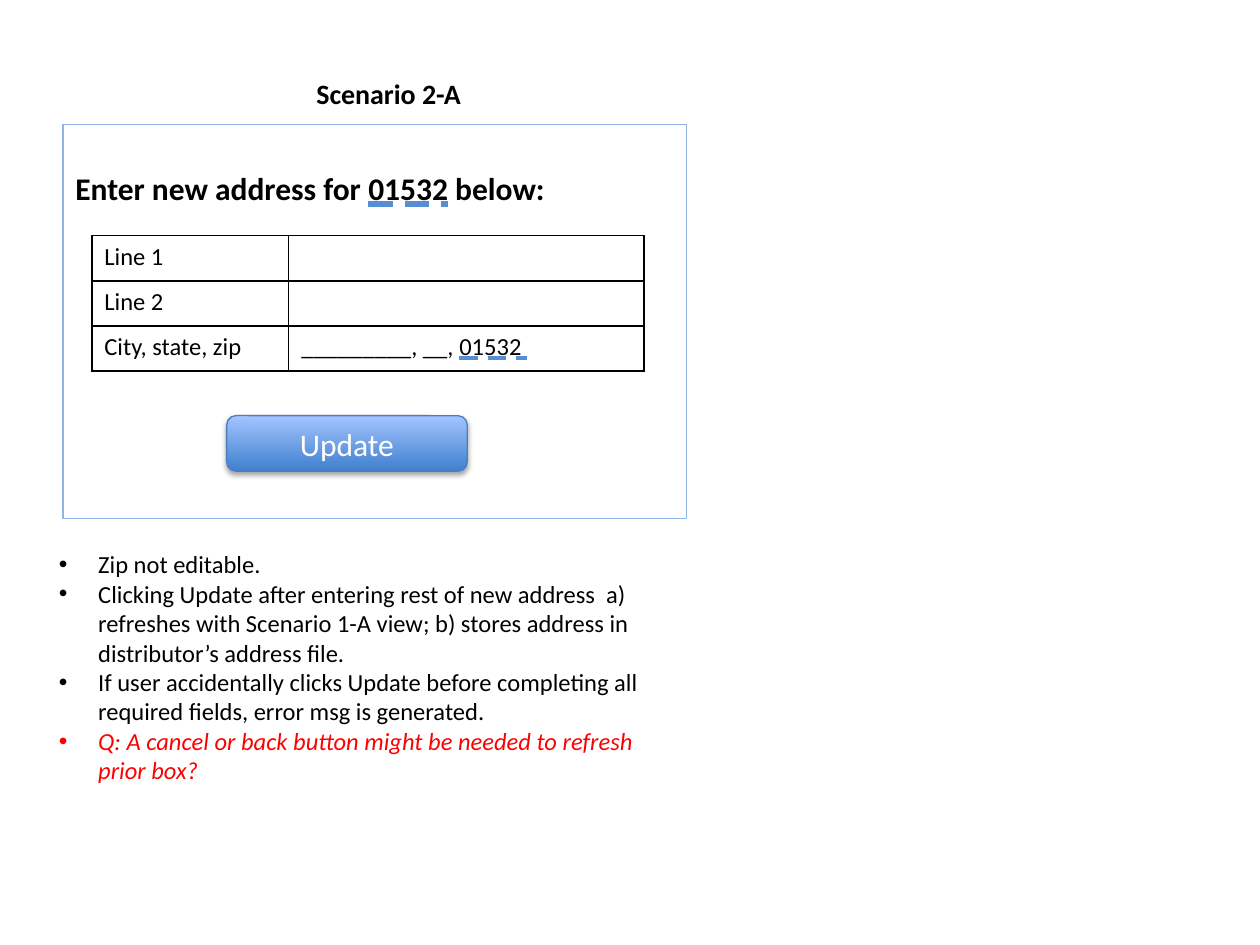
from lxml.etree import SubElement
from pptx import Presentation
from pptx.dml.color import RGBColor
from pptx.enum.shapes import MSO_SHAPE as Shape
from pptx.enum.text import MSO_ANCHOR as Anchor, MSO_UNDERLINE as Underline, PP_ALIGN as Align
from pptx.oxml import parse_xml
from pptx.oxml.ns import nsdecls, qn
from pptx.util import Cm, Pt


def color(value):
    return RGBColor.from_string(value)


def add_run(paragraph, text, size, hex_color="000000", bold=False, italic=False, dashed=False):
    run = paragraph.add_run()
    run.text = text
    font = run.font
    font.name, font.size, font.bold, font.italic = "Calibri", Pt(size), bold, italic
    font.color.rgb = color(hex_color)
    if dashed:
        font.underline = Underline.DASH_HEAVY_LINE
        run._r.rPr.find(qn("a:latin")).addprevious(parse_xml(
            f'<a:uFill {nsdecls("a")}><a:solidFill><a:srgbClr val="558ED5"/></a:solidFill></a:uFill>'))


presentation = Presentation()
presentation.slide_width, presentation.slide_height = Cm(25.4), Cm(19.05)
slide = presentation.slides.add_slide(presentation.slide_layouts[5])

# Title
title = slide.shapes.title
title.left, title.top, title.width, title.height = Cm(1.55), Cm(1.42), Cm(12.57), Cm(0.94)
title.text_frame.vertical_anchor = Anchor.MIDDLE
paragraph = title.text_frame.paragraphs[0]
paragraph.alignment = Align.CENTER
add_run(paragraph, "Scenario 2-A", 16, bold=True)

# Form frame with its heading
frame = slide.shapes.add_shape(Shape.RECTANGLE, Cm(1.27), Cm(2.51), Cm(12.57), Cm(7.95))
frame.shadow.inherit = False
frame.fill.background()
frame.line.color.rgb = color("8EB4E3")
frame.line.width = Pt(0.75)
frame.text_frame.vertical_anchor = Anchor.TOP
frame.text_frame.margin_top = Cm(0.9)
paragraph = frame.text_frame.paragraphs[0]
paragraph.alignment = Align.LEFT
add_run(paragraph, "Enter new address for ", 18, bold=True)
add_run(paragraph, "01532", 18, bold=True, dashed=True)
add_run(paragraph, " below:", 18, bold=True)

# Update button
button = slide.shapes.add_shape(Shape.ROUNDED_RECTANGLE, Cm(4.57), Cm(8.38), Cm(4.85), Cm(1.12))
button.fill.gradient()
button.fill.gradient_angle = 90
for stop, value in zip(button.fill.gradient_stops, ("3F80CE", "A4C4FF")):
    stop.color.rgb = color(value)
button.line.color.rgb = color("4B7EBC")
button.line.width = Pt(0.75)
button.shadow.inherit = False
effects = button._element.spPr.find(qn("a:effectLst"))
effects.append(parse_xml(
    f'<a:outerShdw {nsdecls("a")} blurRad="{Pt(3.1)}" dist="{Pt(1.8)}" dir="5400000" rotWithShape="0">'
    '<a:srgbClr val="000000"><a:alpha val="35000"/></a:srgbClr></a:outerShdw>'))
button.text_frame.vertical_anchor = Anchor.MIDDLE
paragraph = button.text_frame.paragraphs[0]
paragraph.alignment = Align.CENTER
add_run(paragraph, "Update", 18, "FFFFFF")

# Address table: each cell is a list of (text, dashed underline)
rows = [
    [[("Line 1", False)], []],
    [[("Line 2", False)], []],
    [[("City, state, zip", False)], [("_________, __, ", False), ("01532 ", True)]],
]
table = slide.shapes.add_table(3, 2, Cm(1.85), Cm(4.75), Cm(11.13), Cm(2.74)).table
table.first_row = table.horz_banding = False
for column, width in zip(table.columns, (3.97, 7.16)):
    column.width = Cm(width)
for row, contents in zip(table.rows, rows):
    row.height = Cm(0.91)
    for cell, parts in zip(row.cells, contents):
        paragraph = cell.text_frame.paragraphs[0]
        for text, dashed in parts:
            add_run(paragraph, text, 14, dashed=dashed)
        if not parts:
            SubElement(paragraph._p, qn("a:endParaRPr"), sz="1400")
        properties = cell._tc.get_or_add_tcPr()
        for side in ("lnL", "lnR", "lnT", "lnB"):
            properties.append(parse_xml(
                f'<a:{side} {nsdecls("a")} w="{Pt(1)}"><a:solidFill>'
                f'<a:srgbClr val="000000"/></a:solidFill></a:{side}>'))
        cell.fill.background()

# Notes under the form
notes = [
    ("Zip not editable.", "000000", False),
    ("Clicking Update after entering rest of new address  a) refreshes with Scenario 1-A view; "
     "b) stores address in distributor’s address file.", "000000", False),
    ("If user accidentally clicks Update before completing all required fields, "
     "error msg is generated.", "000000", False),
    ("Q: A cancel or back button might be needed to refresh prior box?", "FF0000", True),
]
text_frame = slide.shapes.add_textbox(Cm(0.94), Cm(10.95), Cm(12.93), Cm(5.05)).text_frame
text_frame.word_wrap = True
for index, (text, hex_color, italic) in enumerate(notes):
    paragraph = text_frame.add_paragraph() if index else text_frame.paragraphs[0]
    properties = paragraph._p.get_or_add_pPr()
    properties.set("marL", str(Cm(0.79)))
    properties.set("indent", str(-Cm(0.79)))
    SubElement(properties, qn("a:buFont"), typeface="Arial")
    SubElement(properties, qn("a:buChar"), char="•")
    add_run(paragraph, text, 14, hex_color, italic=italic)

presentation.save("out.pptx")
